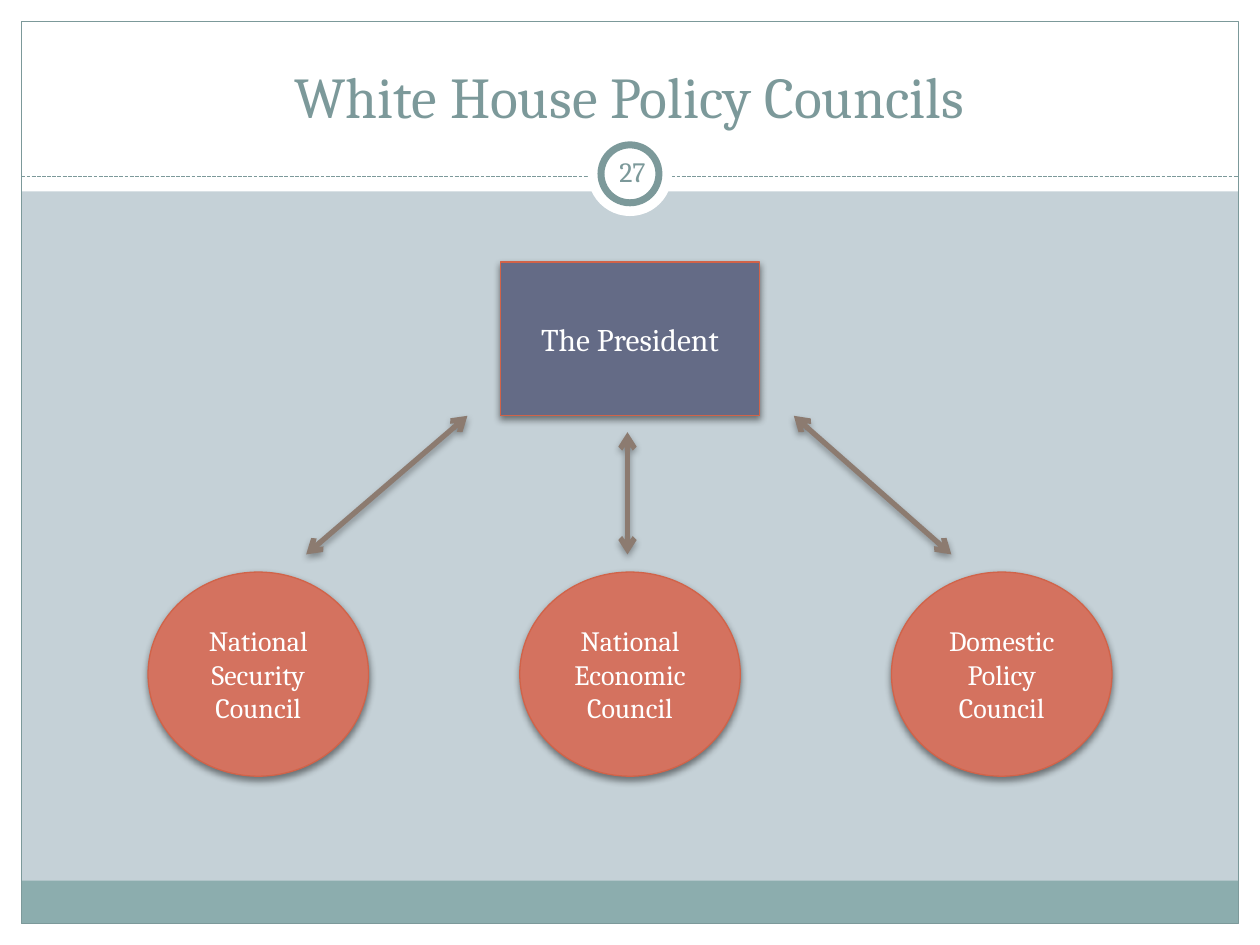
"""Build the White House policy councils slide."""
import pptx
import pptx.util
import pptx.dml.color
import pptx.enum.dml
import pptx.enum.shapes
import pptx.enum.text
import pptx.oxml.ns
from lxml import etree

TITLE = "White House Policy Councils"
NUMBER = "27"
LEADER = "The President"
COUNCILS = ["National Security Council", "National Economic Council", "Domestic Policy Council"]
ARROWS = [((2.43, 4.4), (3.71, 3.3)), ((4.98, 4.4), (4.98, 3.43)), ((7.55, 4.4), (6.3, 3.3))]

THEME = {
    "font": "Cambria", "title": 33, "leader": 18, "body": 16,
    "back": "C5D1D7", "white": "FFFFFF", "frame": "7C999A", "band": "8CADAE",
    "council": "D4725F", "edge": "D16349", "president": "646B86", "arrow": "8C7B70",
}
WIDTH, HEIGHT, MARGIN = 10, 7.5, 0.17
HEADER, DIVIDER, BAND = 1.52, 1.4, 0.34
INNER = WIDTH - 2 * MARGIN
COUNCIL_SIZE, COUNCIL_TOP, COUNCIL_PITCH = (1.75, 1.62), 4.54, 2.95
PRESIDENT_SIZE, PRESIDENT_TOP = (2.06, 1.22), 2.08
BADGE_MIDDLE = 1.38

inches, points = pptx.util.Inches, pptx.util.Pt
kinds = pptx.enum.shapes.MSO_SHAPE
anchors = pptx.enum.text.MSO_ANCHOR


def color(name):
    return pptx.dml.color.RGBColor.from_string(THEME[name])


def apply(target, values):
    for key, value in values.items():
        setattr(target, key, value)


def stroke(line, name, weight, dash=None):
    line.color.rgb = color(name)
    apply(line, {"width": points(weight), "dash_style": dash})


def cast_shadow(effects, opacity):
    shadow = etree.SubElement(effects, pptx.oxml.ns.qn("a:outerShdw"), {
        "blurRad": str(points(4)), "dist": str(points(2)), "dir": "5400000", "rotWithShape": "0"})
    black = etree.SubElement(shadow, pptx.oxml.ns.qn("a:srgbClr"), val="000000")
    etree.SubElement(black, pptx.oxml.ns.qn("a:alpha"), val=str(opacity * 1000))


def write(shape, words, size, ink, anchor=anchors.MIDDLE, inset=None):
    frame = shape.text_frame
    apply(frame, {"word_wrap": True, "vertical_anchor": anchor, "text": words})
    if inset is not None:
        sides = ("left", "right", "top", "bottom")
        apply(frame, {f"margin_{side}": inches(inset) for side in sides})
    paragraph = frame.paragraphs[0]
    paragraph.alignment = pptx.enum.text.PP_ALIGN.CENTER
    apply(paragraph.runs[0].font, {"name": THEME["font"], "size": points(THEME[size])})
    paragraph.runs[0].font.color.rgb = color(ink)


def add_shape(slide, kind, box, fill=None, edge=None, weight=0.75, shadow=False):
    shape = slide.shapes.add_shape(kind, *map(inches, box))
    shape.shadow.inherit = False
    if fill:
        shape.fill.solid()
        shape.fill.fore_color.rgb = color(fill)
    else:
        shape.fill.background()
    if edge:
        stroke(shape.line, edge, weight)
    else:
        shape.line.fill.background()
    if shadow:
        cast_shadow(shape._element.spPr.find(pptx.oxml.ns.qn("a:effectLst")), 45)
    return shape


def add_line(slide, start, end, name, weight, dash=None, arrows=False):
    line = slide.shapes.add_connector(
        pptx.enum.shapes.MSO_CONNECTOR.STRAIGHT, *map(inches, start + end))
    stroke(line.line, name, weight, dash)
    properties = line._element.spPr
    effects = etree.SubElement(properties, pptx.oxml.ns.qn("a:effectLst"))
    if arrows:
        outline = properties.find(pptx.oxml.ns.qn("a:ln"))
        for end_tag in ("a:headEnd", "a:tailEnd"):
            etree.SubElement(outline, pptx.oxml.ns.qn(end_tag), type="arrow")
        cast_shadow(effects, 35)


def add_text(slide, box, words, size, **layout):
    write(slide.shapes.add_textbox(*map(inches, box)), words, size, "frame", **layout)


def draw_frame(slide):
    slide.background.fill.solid()
    slide.background.fill.fore_color.rgb = color("back")
    far, low = WIDTH - MARGIN, HEIGHT - MARGIN
    for box in ((0, low, WIDTH, MARGIN), (0, 0, WIDTH, HEADER),
                (0, 0, MARGIN, HEIGHT), (far, 0, MARGIN, HEIGHT)):
        add_shape(slide, kinds.RECTANGLE, box, "white")
    add_shape(slide, kinds.RECTANGLE, (MARGIN, low - BAND, INNER, BAND), "band")
    add_shape(slide, kinds.RECTANGLE, (MARGIN, MARGIN, INNER, HEIGHT - 2 * MARGIN), edge="frame")
    add_line(slide, (MARGIN, DIVIDER), (far, DIVIDER), "frame", 0.75,
             pptx.enum.dml.MSO_LINE.SQUARE_DOT)
    for size, edge in ((0.67, None), (0.46, "frame")):
        box = ((WIDTH - size) / 2, BADGE_MIDDLE - size / 2, size, size)
        add_shape(slide, kinds.OVAL, box, "white", edge, 4)


def draw_chart(slide):
    wide, high = COUNCIL_SIZE
    first = (WIDTH - wide) / 2 - COUNCIL_PITCH
    for column, council in enumerate(COUNCILS):
        box = (first + column * COUNCIL_PITCH, COUNCIL_TOP, wide, high)
        write(add_shape(slide, kinds.OVAL, box, "council", "edge", shadow=True),
              council, "body", "white")
    wide, high = PRESIDENT_SIZE
    box = ((WIDTH - wide) / 2, PRESIDENT_TOP, wide, high)
    write(add_shape(slide, kinds.RECTANGLE, box, "president", "edge", shadow=True),
          LEADER, "leader", "white")
    for start, end in ARROWS:
        add_line(slide, start, end, "arrow", 3, arrows=True)


def main():
    deck = pptx.Presentation()
    apply(deck, {"slide_width": inches(WIDTH), "slide_height": inches(HEIGHT)})
    slide = deck.slides.add_slide(deck.slide_layouts[6])
    draw_frame(slide)
    add_text(slide, (0.33, 0.25, 9.33, 0.83), TITLE, "title", anchor=anchors.BOTTOM)
    add_text(slide, (4.77, 1.12, 0.5, 0.48), NUMBER, "body", inset=0.05)
    draw_chart(slide)
    deck.save("out.pptx")


if __name__ == "__main__":
    main()
